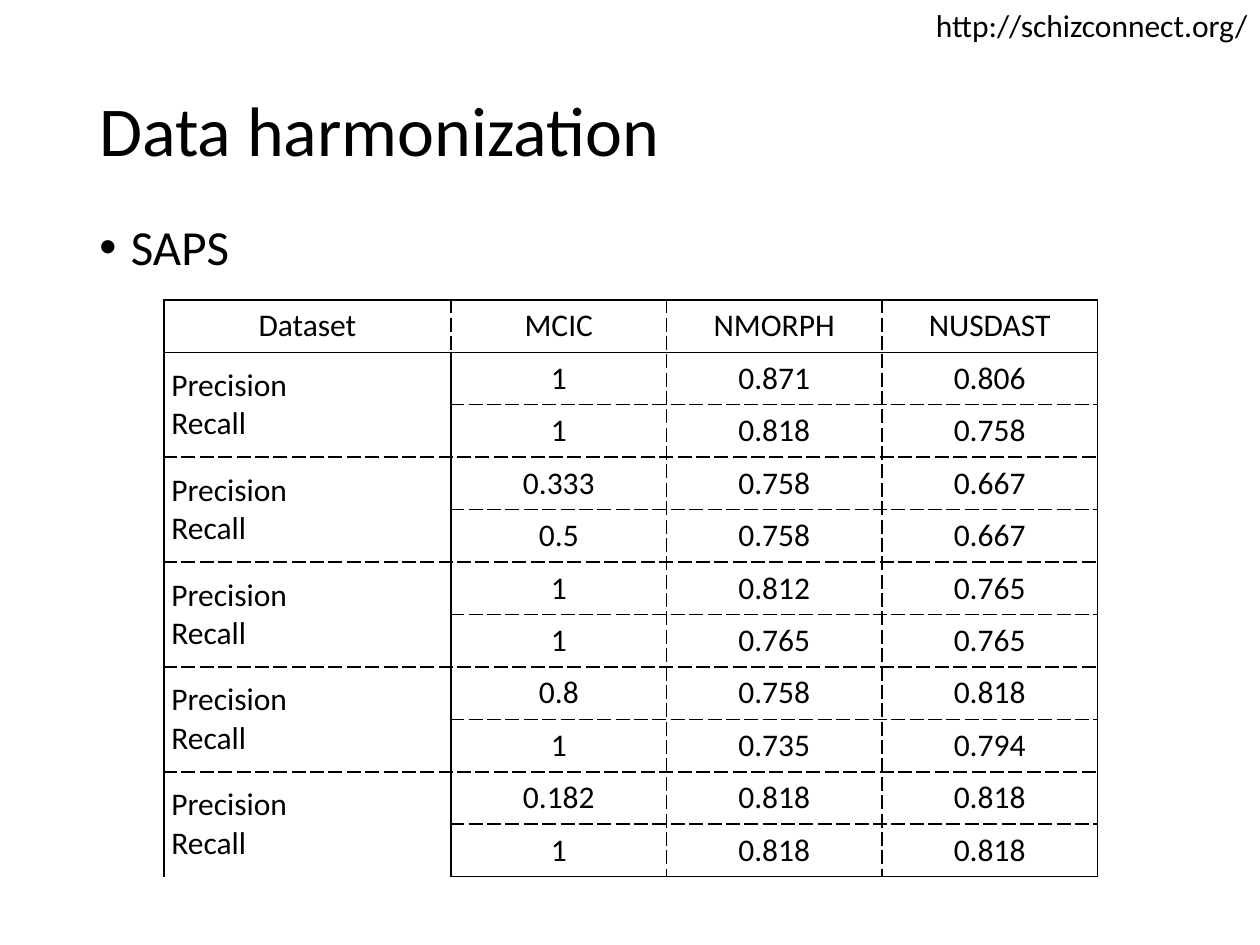
from dataclasses import dataclass

from lxml import etree
from pptx import Presentation
from pptx.dml.color import RGBColor
from pptx.enum.text import MSO_ANCHOR, MSO_AUTO_SIZE, PP_ALIGN
from pptx.oxml.ns import qn
from pptx.util import Inches, Pt

LEFT, MID, RIGHT = PP_ALIGN.LEFT, PP_ALIGN.CENTER, PP_ALIGN.RIGHT
CENTER = MSO_ANCHOR.MIDDLE
TOP = MSO_ANCHOR.TOP
FIT = MSO_AUTO_SIZE.SHAPE_TO_FIT_TEXT
SOLID, DASH = "solid", "lgDash"


@dataclass(frozen=True)
class Theme:
    font: str = "Calibri"
    ink: str = "000000"
    title: int = 40
    body: int = 28
    small: int = 18
    rule: int = 1


@dataclass(frozen=True)
class Box:
    x: float
    y: float
    w: float
    h: float


@dataclass(frozen=True)
class Group:
    precision: tuple[str, ...]
    recall: tuple[str, ...]


THEME = Theme()
HEAD = ("Dataset", "MCIC", "NMORPH", "NUSDAST")
GROUPS = (
    Group(("1", "0.871", "0.806"), ("1", "0.818", "0.758")),
    Group(("0.333", "0.758", "0.667"), ("0.5", "0.758", "0.667")),
    Group(("1", "0.812", "0.765"), ("1", "0.765", "0.765")),
    Group(("0.8", "0.758", "0.818"), ("1", "0.735", "0.794")),
    Group(("0.182", "0.818", "0.818"), ("1", "0.818", "0.818")),
)
ROWS, COLS = 1 + 2 * len(GROUPS), len(HEAD)
WIDTHS = (2.28, 1.71, 1.71, 1.71)
GRID = Box(1.3, 2.38, sum(WIDTHS), 4.58)


def style(frame, size: int, align, space: float = 1.0) -> None:
    """Format every paragraph and run of a text frame."""
    for para in frame.paragraphs:
        para.alignment = align
        para.line_spacing = space
        para.space_before = Pt(0)
        for run in para.runs:
            run.font.name = THEME.font
            run.font.size = Pt(size)
            run.font.color.rgb = RGBColor.from_string(THEME.ink)


def place(shape, box: Box) -> None:
    shape.left, shape.top = Inches(box.x), Inches(box.y)
    shape.width, shape.height = Inches(box.w), Inches(box.h)


def add_text(slide, text: str, box: Box):
    shape = slide.shapes.add_textbox(0, 0, 0, 0)
    place(shape, box)
    shape.text_frame.text = text
    return shape.text_frame


def add_bullet(para) -> None:
    props = para._p.get_or_add_pPr()
    props.set("marL", str(Inches(0.25)))
    props.set("indent", str(Inches(-0.25)))
    etree.SubElement(props, qn("a:buFont"), typeface="Arial")
    etree.SubElement(props, qn("a:buChar"), char="•")


def row_dash(line: int) -> str:
    """Dash of a horizontal rule, counted from the top."""
    return SOLID if line in (0, 1, ROWS) else DASH


def col_dash(line: int, row: int) -> str:
    """Dash of a vertical rule, counted from the left."""
    return SOLID if line in (0, COLS) or (line == 1 and row > 0) else DASH


def add_rules(cell, row: int, col: int) -> None:
    edges = {
        "a:lnL": col_dash(col, row),
        "a:lnR": col_dash(col + 1, row),
        "a:lnT": row_dash(row),
        "a:lnB": row_dash(row + 1),
    }
    props = cell._tc.get_or_add_tcPr()
    for tag, dash in edges.items():
        # Merged label cells have no rule between their two rows
        inner = col == 0 and row > 0 and tag == ("a:lnB" if row % 2 else "a:lnT")
        line = etree.SubElement(props, qn(tag), w=str(Pt(THEME.rule)))
        if inner:
            etree.SubElement(line, qn("a:noFill"))
            continue
        fill = etree.SubElement(line, qn("a:solidFill"))
        etree.SubElement(fill, qn("a:srgbClr"), val=THEME.ink)
        etree.SubElement(line, qn("a:prstDash"), val=dash)


def fill_cell(cell, text: str, row: int, col: int) -> None:
    cell.margin_left = cell.margin_right = Inches(0.06)
    cell.margin_top = cell.margin_bottom = Inches(0.05)
    cell.vertical_anchor = CENTER
    cell.text_frame.text = text
    style(cell.text_frame, THEME.small, LEFT if row and not col else MID)
    add_rules(cell, row, col)
    cell.fill.background()


def add_scores(slide) -> None:
    frame = slide.shapes.add_table(
        ROWS, COLS, Inches(GRID.x), Inches(GRID.y), Inches(GRID.w), Inches(GRID.h)
    )
    table = frame.table
    table.first_row = table.horz_banding = False
    for col, width in zip(table.columns, WIDTHS):
        col.width = Inches(width)
    for row in table.rows:
        row.height = Inches(GRID.h / ROWS)

    lines = [HEAD]
    for group in GROUPS:
        lines.append(("Precision\nRecall", *group.precision))
        lines.append(("", *group.recall))
    for r, line in enumerate(lines):
        for c, text in enumerate(line):
            fill_cell(table.cell(r, c), text, r, c)
    for r in range(1, ROWS, 2):
        table.cell(r, 0).merge(table.cell(r + 1, 0))


def main() -> None:
    deck = Presentation()
    deck.slide_width, deck.slide_height = Inches(10), Inches(7.5)
    slide = deck.slides.add_slide(deck.slide_layouts[5])

    # Web address in the corner
    link = add_text(slide, "http://schizconnect.org/", Box(7.29, 0, 2.71, 0.4))
    link.word_wrap = False
    link.auto_size = FIT
    style(link, THEME.small, RIGHT)

    # Title
    title = slide.shapes.title
    place(title, Box(0.69, 0.55, 8.62, 1.02))
    title.text_frame.text = "Data harmonization"
    title.text_frame.vertical_anchor = CENTER
    style(title.text_frame, THEME.title, LEFT, 0.9)

    # Bullet
    body = add_text(slide, "SAPS", Box(0.69, 1.72, 8.62, 5.04))
    body.word_wrap = True
    body.vertical_anchor = TOP
    add_bullet(body.paragraphs[0])
    style(body, THEME.body, LEFT, 0.9)

    # Score table
    add_scores(slide)
    deck.save("out.pptx")


if __name__ == "__main__":
    main()
